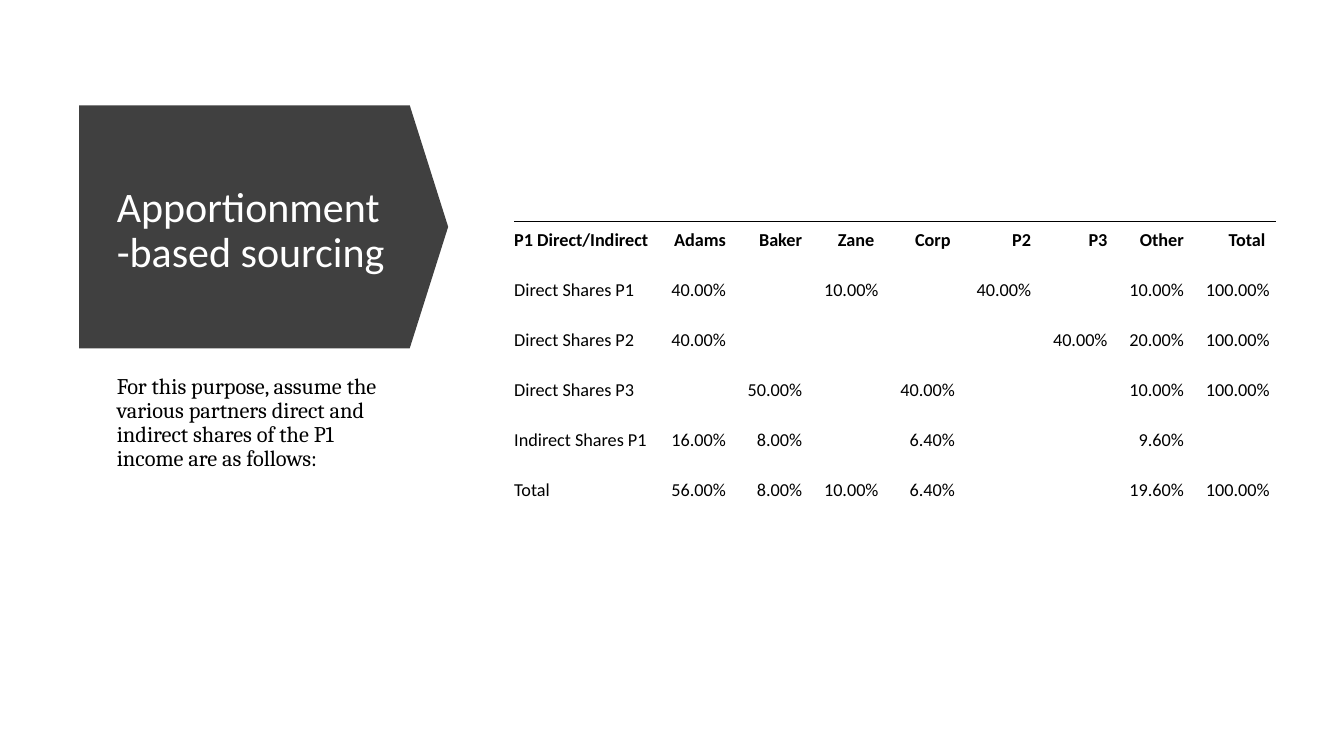
from lxml import etree
from pptx import Presentation
from pptx.dml.color import RGBColor
from pptx.enum.shapes import MSO_SHAPE
from pptx.enum.text import MSO_ANCHOR, PP_ALIGN
from pptx.oxml.ns import qn
from pptx.util import Inches, Pt

DOWN_ARROW = MSO_SHAPE.DOWN_ARROW
TOP, MIDDLE, BOTTOM = MSO_ANCHOR.TOP, MSO_ANCHOR.MIDDLE, MSO_ANCHOR.BOTTOM
LEFT, RIGHT = PP_ALIGN.LEFT, PP_ALIGN.RIGHT

COLORS = {"banner": "404040", "light": "FFFFFF", "ink": "000000"}
SANS, SERIF = "Calibri", "Cambria"
PLAIN_TABLE = "{2D5ABB26-0587-4C30-8999-92F81FD0307C}"


class ShareSlide:
    def __init__(self, deck):
        self.width, self.height = deck.slide_width, deck.slide_height
        self.shapes = deck.slides.add_slide(deck.slide_layouts[6]).shapes

    def across(self, percent):
        return round(self.width * percent / 100)

    def down(self, percent):
        return round(self.height * percent / 100)

    def box(self, left, top, width, height):
        return self.across(left), self.down(top), self.across(width), self.down(height)

    def run(self, paragraph, text, size, font, color, bold=False):
        run = paragraph.add_run()
        run.text = text
        run.font.size, run.font.name, run.font.bold = Pt(size), font, bold
        run.font.color.rgb = RGBColor.from_string(COLORS[color])

    def banner(self, place, rotation, adjustments):
        banner = self.shapes.add_shape(DOWN_ARROW, *self.box(*place))
        banner.rotation = rotation
        for index, value in enumerate(adjustments):
            banner.adjustments[index] = value
        banner.shadow.inherit = False
        banner.fill.solid()
        banner.fill.fore_color.rgb = RGBColor.from_string(COLORS["banner"])
        banner.line.fill.background()

    def text(self, place, words, size, font, color, anchor=TOP, before=0):
        frame = self.shapes.add_textbox(*self.box(*place)).text_frame
        frame.word_wrap = True
        frame.vertical_anchor = anchor
        paragraph = frame.paragraphs[0]
        paragraph.line_spacing = 0.9
        paragraph.space_before = Pt(before)
        self.run(paragraph, words, size, font, color)

    def top_rule(self, cell):
        rule = etree.Element(qn("a:lnT"), w=str(Pt(0.5)))
        fill = etree.SubElement(rule, qn("a:solidFill"))
        etree.SubElement(fill, qn("a:srgbClr"), val=COLORS["ink"])
        cell._tc.get_or_add_tcPr().insert(0, rule)

    def cell(self, cell, words, align, bold):
        cell.margin_left, cell.margin_top = 0, Inches(0.03)
        cell.margin_right, cell.margin_bottom = Inches(0.07), Inches(0.2)
        cell.vertical_anchor = BOTTOM
        paragraph = cell.text_frame.paragraphs[0]
        paragraph.alignment = align
        self.run(paragraph, words, 13, SANS, "ink", bold)

    def table(self, left, top, widths, row_height, rows):
        place = self.box(left, top, sum(widths), row_height * len(rows))
        table = self.shapes.add_table(len(rows), len(widths), *place).table
        table.first_row = table.horz_banding = False
        table._tbl.tblPr.find(qn("a:tableStyleId")).text = PLAIN_TABLE
        for column, width in zip(table.columns, widths):
            column.width = self.across(width)
        for r, row in enumerate(rows):
            table.rows[r].height = self.down(row_height)
            for c, words in enumerate(row):
                cell = table.cell(r, c)
                cell.fill.background()
                if words:
                    self.cell(cell, words, RIGHT if c else LEFT, r == 0)
                if r == 0:
                    self.top_rule(cell)


def main():
    deck = Presentation()
    deck.slide_width, deck.slide_height = Inches(13.33), Inches(7.5)
    slide = ShareSlide(deck)

    slide.banner((10.58, 5.6, 18.08, 48.8), 270, (1, 0.158))
    slide.text((7.95, 17.6, 21.9, 26), "Apportionment-based sourcing",
               30, SANS, "light", MIDDLE)
    slide.text((7.95, 48.93, 21.9, 35.33),
               "For this purpose, assume the various partners direct and "
               "indirect shares of the P1 income are as follows:",
               16, SERIF, "ink", before=10)

    partner_shares = [
        ["P1 Direct/Indirect", "Adams", "Baker", "Zane ", "Corp ", "P2", "P3", "Other", "Total "],
        ["Direct Shares P1", "40.00%", "", "10.00%", "", "40.00%", "", "10.00%", "100.00%"],
        ["Direct Shares P2", "40.00%", "", "", "", "", "40.00%", "20.00%", "100.00%"],
        ["Direct Shares P3", "", "50.00%", "", "40.00%", "", "", "10.00%", "100.00%"],
        ["Indirect Shares P1", "16.00%", "8.00%", "", "6.40%", "", "", "9.60%", ""],
        ["Total", "56.00%", "8.00%", "10.00%", "6.40%", "", "", "19.60%", "100.00%"],
    ]
    slide.table(38.26, 29.33, [10.58] + [5.68] * 7 + [6.38], 6.61, partner_shares)
    deck.save("out.pptx")


if __name__ == "__main__":
    main()
